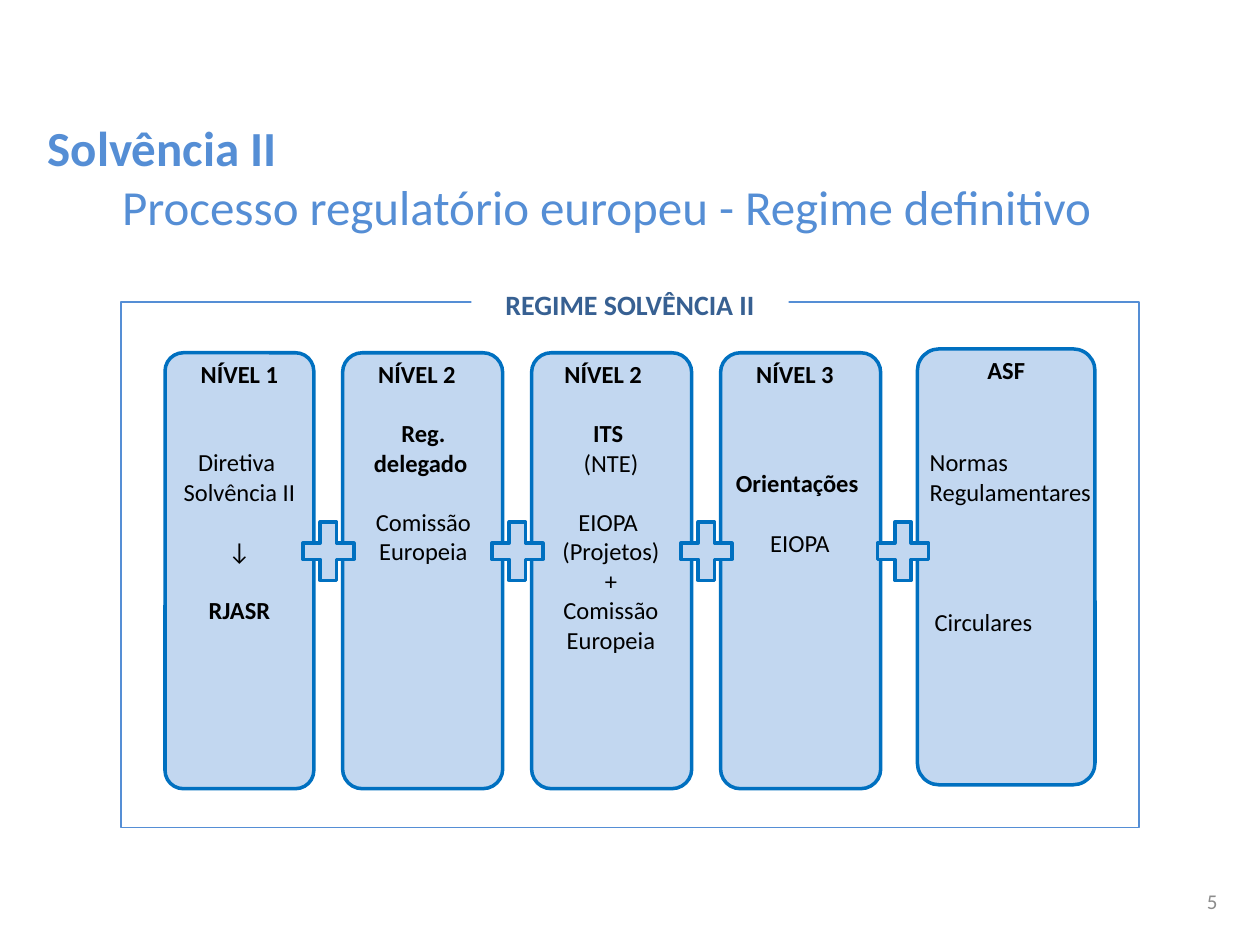
from lxml import etree
from pptx import Presentation
from pptx.dml.color import RGBColor
from pptx.enum.shapes import MSO_SHAPE
from pptx.enum.text import MSO_ANCHOR, PP_ALIGN
from pptx.util import Pt

RECTANGLE, ROUNDED, PLUS = MSO_SHAPE.RECTANGLE, MSO_SHAPE.ROUNDED_RECTANGLE, MSO_SHAPE.MATH_PLUS
LEFT, CENTER, RIGHT = PP_ALIGN.LEFT, PP_ALIGN.CENTER, PP_ALIGN.RIGHT
TOP, MIDDLE = MSO_ANCHOR.TOP, MSO_ANCHOR.MIDDLE
BOLD = {"bold": True}
GAP = {"space_before": 17.1}

CARDS = [
    (94.3, 201.6, 85, "NÍVEL 1"),
    (195.8, 201.6, 91.5, "NÍVEL 2"),
    (303.8, 201.6, 91.5, "NÍVEL 2 "),
    (411.8, 201.6, 91.5, "NÍVEL 3"),
    (524.2, 199.4, 101.5, "ASF"),
]
BODIES = [
    ((94.3, 252, 85, 126), CENTER,
     [("Diretiva ", {}), ("Solvência II", {}), ("↓", GAP), ("RJASR", BOLD | GAP)]),
    ((196.6, 235.4, 90.7, 92), CENTER,
     [("Reg. delegado ", BOLD), ("Comissão", GAP), ("Europeia", {})]),
    ((303.8, 235.4, 90.7, 143.3), CENTER,
     [("ITS ", BOLD), ("(NTE)", {}), ("EIOPA ", GAP), ("(Projetos)", {}),
      ("+", {}), ("Comissão", {}), ("Europeia", {})]),
    ((411.8, 264.1, 90.7, 57.8), CENTER, [("Orientações ", BOLD), ("EIOPA", GAP)]),
    ((524.2, 252, 108, 41), LEFT, [("Normas Regulamentares", {})]),
    ((527, 343.4, 108, 24.5), LEFT, [("Circulares", {})]),
]


def color(value):
    """Turn a hex string into a colour."""
    return RGBColor.from_string(value)


def add_box(slide, kind, box, fill=None, line=None, line_width=1):
    """Add a preset shape with an optional fill and outline."""
    shape = slide.shapes.add_shape(kind, *map(Pt, box))
    shape.shadow.inherit = False
    if fill:
        shape.fill.solid()
        shape.fill.fore_color.rgb = color(fill)
    else:
        shape.fill.background()
    if line:
        shape.line.color.rgb = color(line)
        shape.line.width = Pt(line_width)
    else:
        shape.line.fill.background()
    return shape


def format_paragraph(paragraph, text, size=14, fill="000000", bold=False,
                     align=LEFT, space_before=0, margin=0):
    """Write one paragraph with its format."""
    paragraph.text = text
    paragraph.alignment = align
    paragraph.space_before = Pt(space_before)
    if margin:
        paragraph._p.get_or_add_pPr().set("marL", str(Pt(margin)))
    font = paragraph.font
    font.name, font.size, font.bold = "Calibri", Pt(size), bold
    font.color.rgb = color(fill)


def add_text(slide, box, lines, anchor=TOP, **style):
    """Add a wrapping text box of (text, format) lines that share a style."""
    frame = slide.shapes.add_textbox(*map(Pt, box)).text_frame
    frame.word_wrap = True
    frame.vertical_anchor = anchor
    for index, (text, changes) in enumerate(lines):
        paragraph = frame.add_paragraph() if index else frame.paragraphs[0]
        format_paragraph(paragraph, text, **(style | changes))


def add_card(slide, left, top, width):
    """Add the rounded panel of one regulatory level."""
    card = add_box(slide, ROUNDED, (left, top, width, 249.1), "C2D7F0", "0070C0", 2)
    card.adjustments[0] = 0.123


def main():
    """Build the slide and save it."""
    presentation = Presentation()
    presentation.slide_width, presentation.slide_height = Pt(720), Pt(540)
    slide = presentation.slides.add_slide(presentation.slide_layouts[6])

    add_text(slide, (20.2, 63.4, 680.4, 74.9),
             [("Solvência II", BOLD),
              ("Processo regulatório europeu - Regime definitivo", {"margin": 42.5})],
             anchor=MIDDLE, size=28, fill="558ED5")
    add_text(slide, (553, 502.6, 149.8, 24.5), [("5", {})],
             anchor=MIDDLE, size=12, fill="8C8C8C", align=RIGHT)

    add_box(slide, RECTANGLE, (69.1, 172.8, 581.8, 300.2), line="558ED5")
    label = add_box(slide, RECTANGLE, (269.3, 160.6, 181.4, 26.6), "FFFFFF")
    label.text_frame.vertical_anchor = TOP
    format_paragraph(label.text_frame.paragraphs[0], "REGIME SOLVÊNCIA II",
                     size=16, fill="376092", bold=True, align=CENTER)

    for left, top, width, _ in CARDS:
        add_card(slide, left, top, width)
    for left, *_ in CARDS[1:]:
        add_box(slide, PLUS, (left - 28, 292.3, 39.6, 45.4), "C2D7F0", "0070C0", 2)
    for left, top, width, heading in CARDS:
        offset = (width - 85) / 2 if heading == "ASF" else 0
        add_text(slide, (left + offset, top, 85, 24.5), [(heading, BOLD)], align=CENTER)
    for box, align, lines in BODIES:
        add_text(slide, box, lines, align=align)

    presentation.save("out.pptx")


if __name__ == "__main__":
    main()
